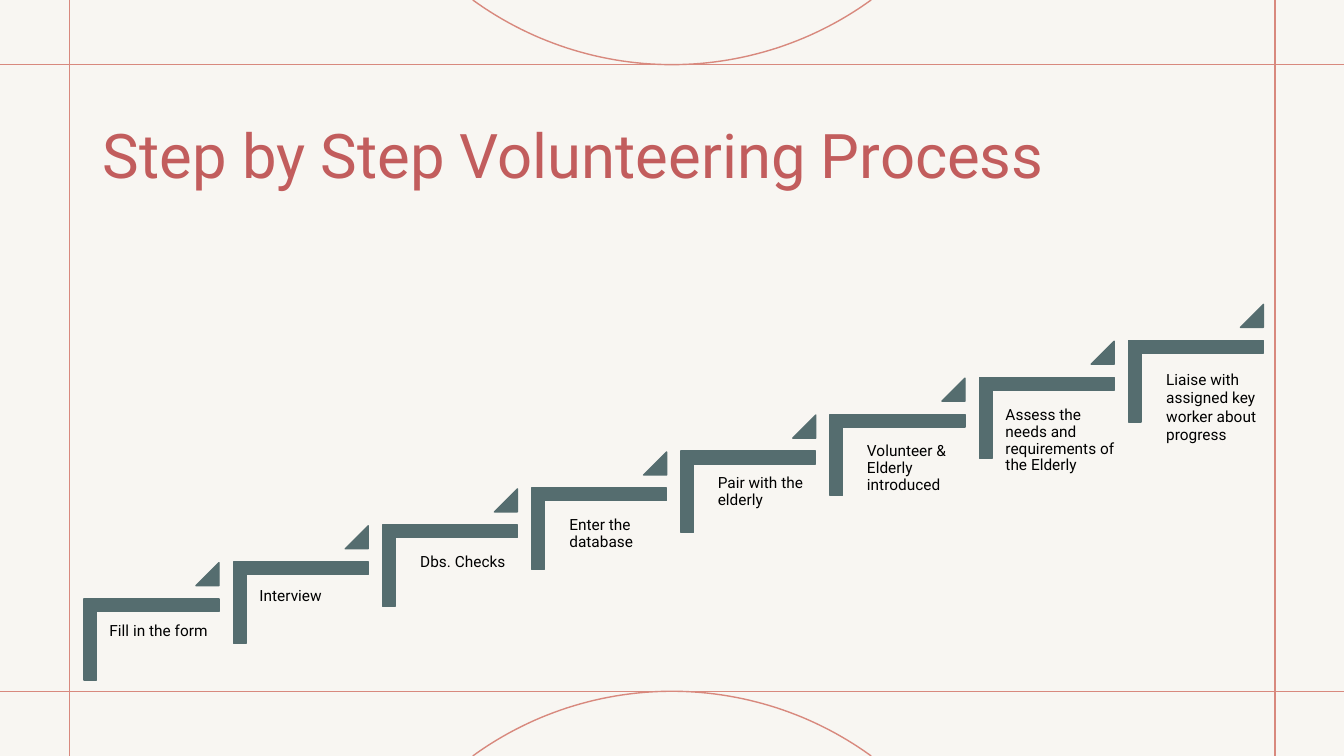
"""Build the volunteering process slide: a staircase of eight steps in a line frame."""
import math

from lxml import etree
from pptx import Presentation
from pptx import util as u
from pptx.dml.color import RGBColor
from pptx.enum import shapes, text
from pptx.oxml import ns

CREAM = RGBColor(0xF8, 0xF6, 0xF2)
SALMON = RGBColor(0xD8, 0x89, 0x7E)
SLATE = RGBColor(0x55, 0x6D, 0x6F)
ROSE = RGBColor(0xC2, 0x5D, 0x5D)
BLACK = RGBColor(0, 0, 0)

WIDTH, HEIGHT = 33.87, 19.05
LEFT_RULE, RIGHT_RULE = 1.75, 32.13
TOP_RULE, BOTTOM_RULE = 1.63, 17.42

STEP_LEFT, STEP_TOP = 2.12, 15.09
STEP_RUN, STEP_RISE = 3.76, 0.93
BRACKET_WIDTH, BRACKET_HEIGHT, BRACKET_BAR = 3.4, 2.05, 0.32
TRIANGLE_LEFT, TRIANGLE_GAP, TRIANGLE_SIZE = 2.82, 0.33, 0.58

STEPS = [
    ("Fill in the form", 0.51, 0.48, 0.9),
    ("Interview", 0.53, 0.53, 0.9),
    ("Dbs. Checks", 0.82, 0.61, 0.9),
    ("Enter the database", 0.82, 0.6, 0.9),
    ("Pair with the elderly", 0.8, 0.48, 0.9),
    ("Volunteer & Elderly introduced", 0.8, 0.61, 0.9),
    ("Assess the needs and requirements of the Elderly", 0.53, 0.63, 0.9),
    ("Liaise with assigned key worker about progress", 0.82, 0.61, 1.0),
]


def draw_outline(points, color, filled):
    corners = [(u.Cm(x), u.Cm(y)) for x, y in points]
    builder = page.shapes.build_freeform(*corners[0])
    builder.add_line_segments(corners[1:], close=filled)
    outline = builder.convert_to_shape()
    outline.shadow.inherit = False
    outline.line.color.rgb = color
    outline.line.width = u.Pt(1)
    if filled:
        outline.fill.solid()
        outline.fill.fore_color.rgb = color
    else:
        outline.fill.background()


def write_text(box, words, size, color, frame_format, para_format):
    frame = box.text_frame
    for name, value in frame_format.items():
        setattr(frame, name, value)
    para = frame.paragraphs[0]
    for name, value in para_format.items():
        setattr(para, name, value)
    span = para.add_run()
    span.text = words
    span.font.color.rgb = color
    for name, value in {"name": "Roboto", "size": u.Pt(size)}.items():
        setattr(span.font, name, value)


deck = Presentation()
deck.slide_width, deck.slide_height = u.Cm(WIDTH), u.Cm(HEIGHT)
page = deck.slides.add_slide(deck.slide_layouts[5])
page.background.fill.solid()
page.background.fill.fore_color.rgb = CREAM

title = page.shapes.title
title_place = {"left": 2.34, "top": 2.03, "width": 29.21, "height": 3.68}
for name, value in title_place.items():
    setattr(title, name, u.Cm(value))
write_text(
    title, "Step by Step Volunteering Process", 44, ROSE,
    {"word_wrap": True, "auto_size": text.MSO_AUTO_SIZE.NONE,
     "vertical_anchor": text.MSO_ANCHOR.MIDDLE},
    {"alignment": text.PP_ALIGN.LEFT},
)

frame_rules = [
    (0, BOTTOM_RULE, WIDTH, BOTTOM_RULE),
    (0, TOP_RULE, WIDTH, TOP_RULE),
    (RIGHT_RULE, 0, RIGHT_RULE, HEIGHT),
    (LEFT_RULE, 0, LEFT_RULE, HEIGHT),
]
for ends in frame_rules:
    rule = page.shapes.add_connector(
        shapes.MSO_CONNECTOR.STRAIGHT, *[u.Cm(end) for end in ends])
    rule.line.color.rgb = SALMON
    rule.line.width = u.Pt(1)
    etree.SubElement(rule._element.spPr, ns.qn("a:effectLst"))

half_chord = 5.02
radius = (half_chord ** 2 + TOP_RULE ** 2) / (2 * TOP_RULE)
half_angle = math.asin(half_chord / radius)
for edge, direction in ((TOP_RULE, -1), (BOTTOM_RULE, 1)):
    arc = []
    for tick in range(-30, 31):
        angle = half_angle * tick / 30
        arc.append((WIDTH / 2 + radius * math.sin(angle),
                    edge + direction * radius * (1 - math.cos(angle))))
    draw_outline(arc, SALMON, False)

for index, (words, indent, drop, spacing) in enumerate(STEPS):
    left = STEP_LEFT + index * STEP_RUN
    top = STEP_TOP - index * STEP_RISE
    right, bottom = left + BRACKET_WIDTH, top + BRACKET_HEIGHT
    inner_left, inner_top = left + BRACKET_BAR, top + BRACKET_BAR
    draw_outline(
        [(right, top), (right, inner_top), (inner_left, inner_top),
         (inner_left, bottom), (left, bottom), (left, top)], SLATE, True)

    foot = top - TRIANGLE_GAP
    tip = left + TRIANGLE_LEFT + TRIANGLE_SIZE
    draw_outline(
        [(tip - TRIANGLE_SIZE, foot), (tip, foot - TRIANGLE_SIZE), (tip, foot)],
        SLATE, True)

    label = page.shapes.add_textbox(
        u.Cm(left + indent), u.Cm(top + drop), u.Cm(3.07), u.Cm(2.69))
    margins = {f"margin_{side}": u.Cm(0.13)
               for side in ("left", "top", "right", "bottom")}
    write_text(label, words, 11, BLACK, {"word_wrap": True, **margins},
               {"line_spacing": spacing, "space_after": u.Pt(5)})

deck.save("out.pptx")
